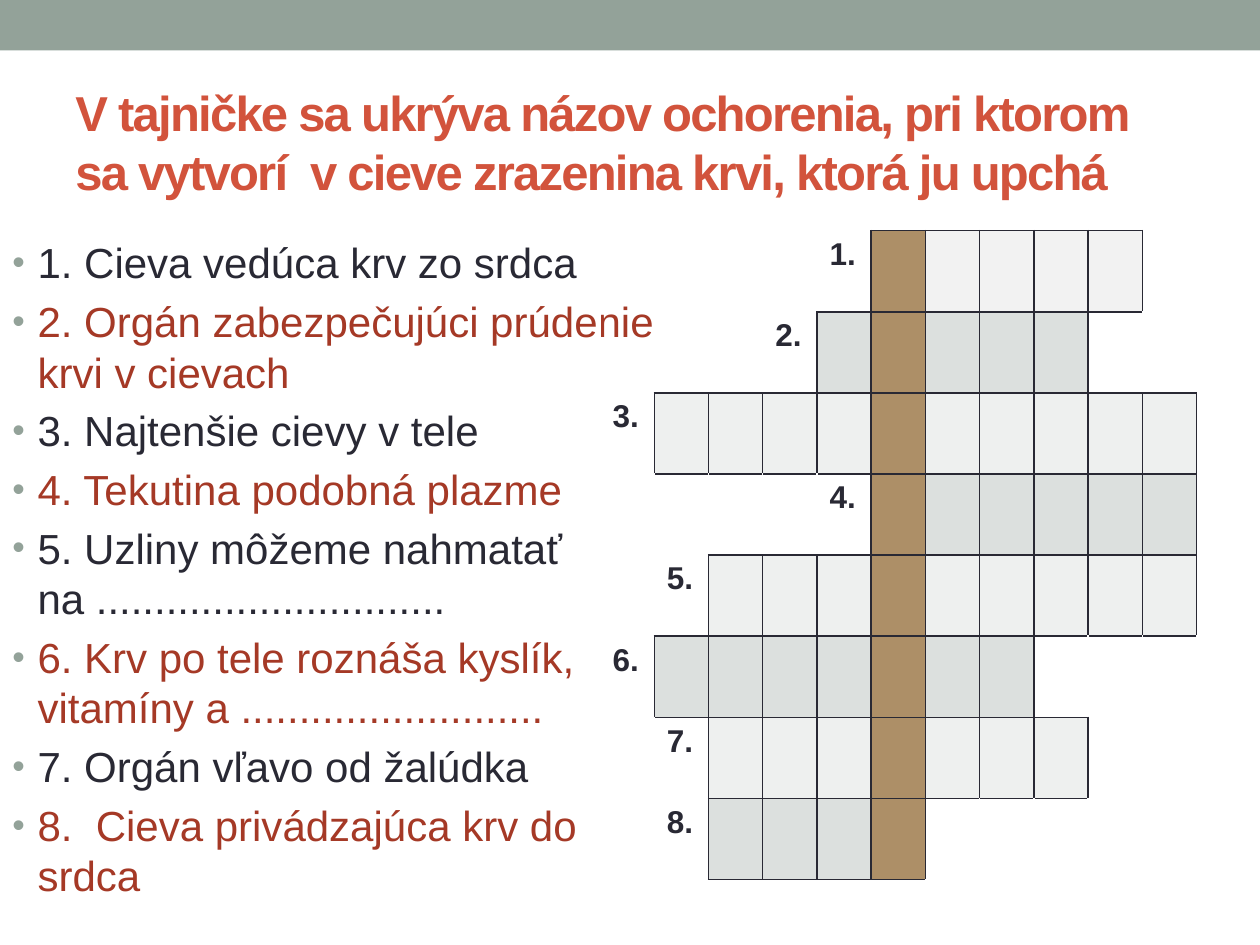
from dataclasses import dataclass

from lxml import etree
from pptx import Presentation
from pptx import util as u
from pptx.dml.color import RGBColor
from pptx.enum import shapes, text
from pptx.oxml import ns


@dataclass(frozen=True)
class Theme:
    font: str = "Arial"
    band: str = "93A299"
    heading: str = "D2533C"
    ink: str = "292934"
    accent: str = "A53926"
    paper: str = "FFFFFF"
    secret: str = "AD8F67"
    top_row: str = "F2F2F2"
    light_row: str = "EEF0EF"
    dark_row: str = "DCE0DE"
    heading_size: float = 28
    clue_size: float = 24
    number_size: float = 18


@dataclass(frozen=True)
class Answer:
    clue: str
    first: int
    last: int


THEME = Theme()
SECRET_COLUMN = 5
COLUMNS = 11
COLUMN_WIDTH = 31
ROW_HEIGHT = 46.35
ANSWERS = [
    Answer("Cieva vedúca krv zo srdca", 5, 9),
    Answer("Orgán zabezpečujúci prúdenie krvi v cievach", 4, 8),
    Answer("Najtenšie cievy v tele", 1, 10),
    Answer("Tekutina podobná plazme", 5, 10),
    Answer("Uzliny môžeme nahmatať na ..............................", 2, 10),
    Answer("Krv po tele roznáša kyslík, vitamíny a ..........................", 1, 7),
    Answer("Orgán vľavo od žalúdka", 2, 8),
    Answer(" Cieva privádzajúca krv do srdca", 2, 5),
]


def write(paragraph, words: str, *, size: float, color: str, bold: bool = False,
          spacing: float = 0) -> None:
    run = paragraph.add_run()
    run.text = words
    run.font.name = THEME.font
    run.font.size = u.Pt(size)
    run.font.bold = bold
    run.font.color.rgb = RGBColor.from_string(color)
    if spacing:
        run.font._element.set("spc", str(round(spacing * 100)))


def add_frame(slide, left: float, top: float, width: float, height: float, anchor):
    frame = slide.shapes.add_textbox(
        u.Pt(left), u.Pt(top), u.Pt(width), u.Pt(height)).text_frame
    frame.word_wrap = True
    frame.vertical_anchor = anchor
    return frame


def add_bullet(paragraph) -> None:
    properties = paragraph._p.get_or_add_pPr()
    properties.set("marL", str(u.Pt(14.4)))
    properties.set("indent", str(u.Pt(-14.4)))
    color = etree.SubElement(properties, ns.qn("a:buClr"))
    etree.SubElement(color, ns.qn("a:srgbClr"), val=THEME.band)
    etree.SubElement(properties, ns.qn("a:buSzPct"), val="85000")
    etree.SubElement(properties, ns.qn("a:buFont"), typeface=THEME.font)
    etree.SubElement(properties, ns.qn("a:buChar"), char="•")


def add_clues(slide) -> None:
    frame = add_frame(slide, 0, 131.8, 393.8, 398.9, text.MSO_ANCHOR.TOP)
    for index, answer in enumerate(ANSWERS):
        clue = frame.add_paragraph() if index else frame.paragraphs[0]
        clue.space_before = u.Pt(THEME.clue_size * 0.2)
        add_bullet(clue)
        write(clue, f"{index + 1}. {answer.clue}", size=THEME.clue_size,
              color=THEME.accent if index % 2 else THEME.ink)


def is_letter(row: int, column: int) -> bool:
    return (0 <= row < len(ANSWERS)
            and ANSWERS[row].first <= column <= ANSWERS[row].last)


def letter_color(row: int, column: int) -> str:
    if column == SECRET_COLUMN:
        return THEME.secret
    if row == 0:
        return THEME.top_row
    return THEME.dark_row if row % 2 else THEME.light_row


def add_borders(cell, row: int, column: int) -> None:
    neighbours = {"a:lnL": (row, column - 1), "a:lnR": (row, column + 1),
                  "a:lnT": (row - 1, column), "a:lnB": (row + 1, column)}
    for tag, neighbour in neighbours.items():
        outlined = is_letter(row, column) or is_letter(*neighbour)
        border = etree.SubElement(cell._tc.get_or_add_tcPr(), ns.qn(tag),
                                  w=str(u.Pt(1)))
        fill = etree.SubElement(border, ns.qn("a:solidFill"))
        etree.SubElement(fill, ns.qn("a:srgbClr"),
                         val=THEME.ink if outlined else THEME.paper)


def add_crossword(slide) -> None:
    crossword = slide.shapes.add_table(
        len(ANSWERS), COLUMNS, u.Pt(342.9), u.Pt(131.8),
        u.Pt(COLUMN_WIDTH * COLUMNS), u.Pt(ROW_HEIGHT * len(ANSWERS))).table
    crossword.first_row = False
    crossword.horz_banding = False
    for column in crossword.columns:
        column.width = u.Pt(COLUMN_WIDTH)
    for row, answer in enumerate(ANSWERS):
        crossword.rows[row].height = u.Pt(ROW_HEIGHT)
        for column in range(COLUMNS):
            cell = crossword.cell(row, column)
            add_borders(cell, row, column)
            if is_letter(row, column):
                cell.fill.solid()
                cell.fill.fore_color.rgb = RGBColor.from_string(
                    letter_color(row, column))
            else:
                cell.fill.background()
        number = crossword.cell(row, answer.first - 1).text_frame.paragraphs[0]
        write(number, f"{row + 1}.", size=THEME.number_size,
              color=THEME.ink, bold=True)


def add_band(slide) -> None:
    band = slide.shapes.add_shape(shapes.MSO_SHAPE.RECTANGLE, 0, 0,
                                  u.Pt(720), u.Pt(28.8))
    band.shadow.inherit = False
    band.fill.solid()
    band.fill.fore_color.rgb = RGBColor.from_string(THEME.band)
    band.line.fill.background()


def main() -> None:
    deck = Presentation()
    deck.slide_width, deck.slide_height = u.Pt(720), u.Pt(540)
    slide = deck.slides.add_slide(deck.slide_layouts[6])
    add_band(slide)
    heading = add_frame(slide, 36, 41.8, 648, 77.8, text.MSO_ANCHOR.MIDDLE)
    write(heading.paragraphs[0],
          "V tajničke sa ukrýva názov ochorenia, pri ktorom sa vytvorí  "
          "v cieve zrazenina krvi, ktorá ju upchá",
          size=THEME.heading_size, color=THEME.heading, bold=True, spacing=-1)
    add_clues(slide)
    add_crossword(slide)
    deck.save("out.pptx")


if __name__ == "__main__":
    main()
